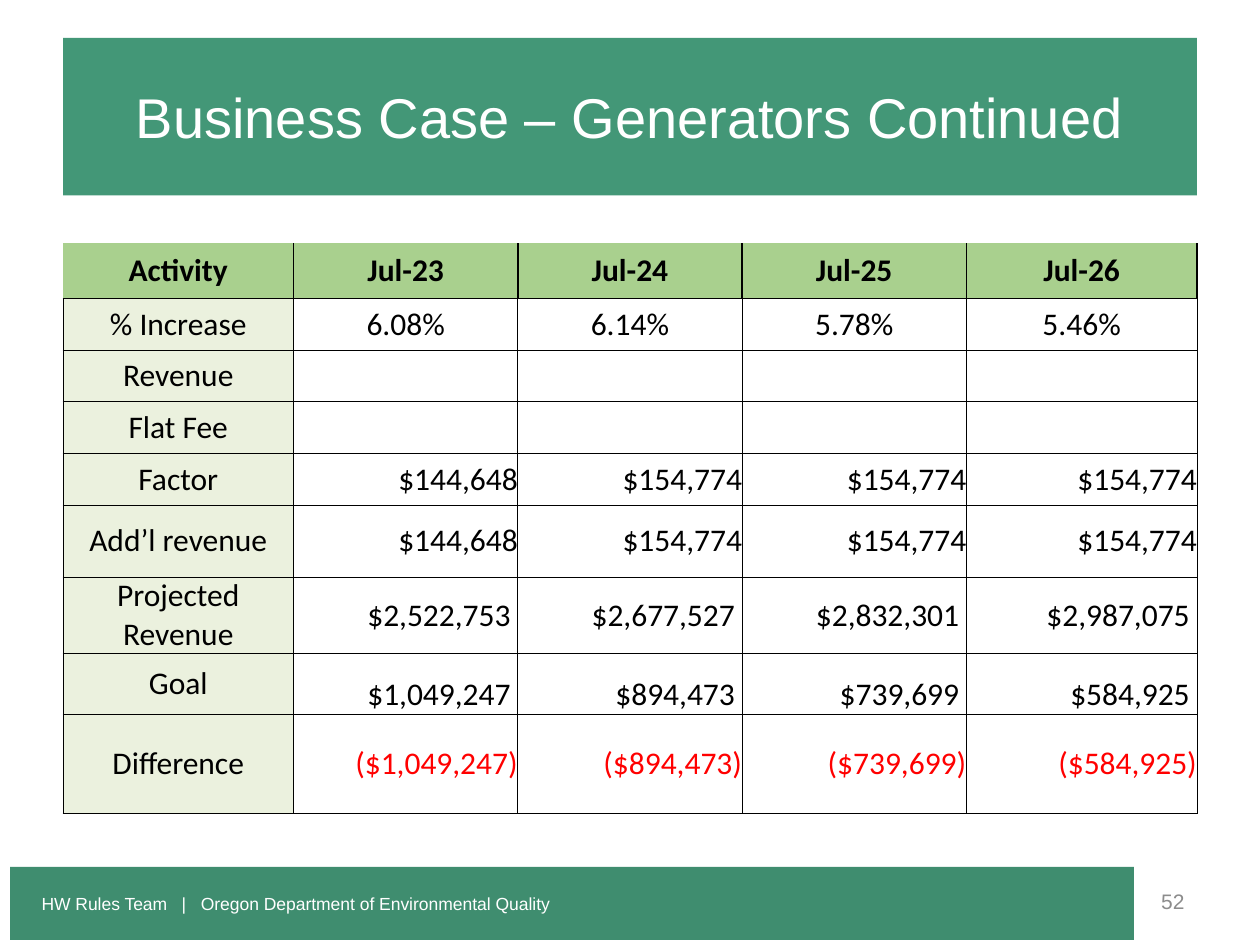
from typing import NamedTuple

from lxml.etree import SubElement
from pptx import Presentation
from pptx.dml.color import RGBColor
from pptx.enum.shapes import MSO_SHAPE
from pptx.enum.text import MSO_ANCHOR, MSO_AUTO_SIZE, PP_ALIGN
from pptx.oxml.ns import qn
from pptx.util import Inches, Pt

COLORS = {
    "title": "439777", "footer": "3F8D6F", "header": "A9D08E", "label": "EBF1DE",
    "white": "FFFFFF", "black": "000000", "gray": "8C8C8C", "red": "FF0000",
}


class Row(NamedTuple):
    height: float
    label: str
    values: tuple = ("",) * 4
    align: PP_ALIGN = PP_ALIGN.RIGHT
    anchor: MSO_ANCHOR = MSO_ANCHOR.MIDDLE
    color: str = "black"


COL_WIDTHS = (1.83, 1.78, 1.78, 1.78, 1.83)
ROWS = [
    Row(0.44, "Activity", ("Jul-23", "Jul-24", "Jul-25", "Jul-26"), PP_ALIGN.CENTER),
    Row(0.41, "% Increase", ("6.08%", "6.14%", "5.78%", "5.46%"), PP_ALIGN.CENTER),
    Row(0.41, "Revenue"),
    Row(0.41, "Flat Fee"),
    Row(0.41, "Factor", ("$144,648", "$154,774", "$154,774", "$154,774")),
    Row(0.57, "Add’l revenue", ("$144,648", "$154,774", "$154,774", "$154,774")),
    Row(0.61, "Projected Revenue",
        ("$2,522,753 ", "$2,677,527 ", "$2,832,301 ", "$2,987,075 ")),
    Row(0.48, "Goal", ("$1,049,247 ", "$894,473 ", "$739,699 ", "$584,925 "),
        anchor=MSO_ANCHOR.BOTTOM),
    Row(0.79, "Difference", ("($1,049,247)", "($894,473)", "($739,699)", "($584,925)"),
        color="red"),
]


def rgb(name: str) -> RGBColor:
    return RGBColor.from_string(COLORS[name])


def place(sp, left: float, top: float, width: float, height: float) -> None:
    sp.left, sp.top = Inches(left), Inches(top)
    sp.width, sp.height = Inches(width), Inches(height)


def add_text(tf, text: str, size: float, color: str, align: PP_ALIGN,
             font: str = "Arial", bold: bool = False) -> None:
    p = tf.paragraphs[0]
    p.alignment = align
    r = p.add_run()
    r.text = text
    r.font.name, r.font.size, r.font.bold = font, Pt(size), bold
    r.font.color.rgb = rgb(color)


def set_borders(cell, widths: dict) -> None:
    """Draw black cell edges; a width of 0 leaves the edge off."""
    tc_pr = cell._tc.get_or_add_tcPr()
    for side in "LRTB":
        width = widths.get(side, 0)
        ln = SubElement(tc_pr, qn(f"a:ln{side}"), w=str(Pt(width)))
        if width:
            fill = SubElement(ln, qn("a:solidFill"))
            SubElement(fill, qn("a:srgbClr"), val=COLORS["black"])
        else:
            SubElement(ln, qn("a:noFill"))


def fill_cell(cell, text: str, row: Row, is_header: bool, is_label: bool) -> None:
    cell.margin_left = cell.margin_right = cell.margin_top = cell.margin_bottom = 0
    cell.vertical_anchor = MSO_ANCHOR.MIDDLE if is_label else row.anchor
    if is_header:
        set_borders(cell, {"L": 0 if is_label else 1, "R": 1, "B": 0.5})
    else:
        set_borders(cell, dict.fromkeys("LRTB", 0.5))
    if is_header or is_label:
        cell.fill.solid()
        cell.fill.fore_color.rgb = rgb("header" if is_header else "label")
    else:
        cell.fill.background()
    if text:
        add_text(cell.text_frame, text, 18, "black" if is_label else row.color,
                 PP_ALIGN.CENTER if is_label else row.align, "Calibri", is_header)


def add_fee_table(s) -> None:
    frame = s.shapes.add_table(len(ROWS), len(COL_WIDTHS), Inches(0.5), Inches(1.93),
                               Inches(sum(COL_WIDTHS)),
                               Inches(sum(row.height for row in ROWS)))
    table = frame.table
    table.horz_banding = False
    for col, width in zip(table.columns, COL_WIDTHS):
        col.width = Inches(width)
    for i, row in enumerate(ROWS):
        table.rows[i].height = Inches(row.height)
        for j, text in enumerate((row.label, *row.values)):
            fill_cell(table.cell(i, j), text, row, i == 0, j == 0)


def main() -> None:
    prs = Presentation()
    prs.slide_width, prs.slide_height = Inches(10), Inches(7.5)
    s = prs.slides.add_slide(prs.slide_layouts[5])

    # Title band
    title = s.shapes.title
    place(title, 0.5, 0.3, 9, 1.25)
    title.fill.solid()
    title.fill.fore_color.rgb = rgb("title")
    tf = title.text_frame
    tf.auto_size = MSO_AUTO_SIZE.NONE
    tf.vertical_anchor = MSO_ANCHOR.MIDDLE
    add_text(tf, "Business Case – Generators Continued", 32, "white", PP_ALIGN.CENTER)

    # Footer band
    footer = s.shapes.add_shape(MSO_SHAPE.RECTANGLE, Inches(0.08), Inches(6.88),
                                Inches(8.92), Inches(0.58))
    footer.shadow.inherit = False
    footer.fill.solid()
    footer.fill.fore_color.rgb = rgb("footer")
    footer.line.fill.background()
    tf = footer.text_frame
    tf.margin_left = Inches(0.25)
    tf.vertical_anchor = MSO_ANCHOR.MIDDLE
    add_text(tf, "HW Rules Team   |   Oregon Department of Environmental Quality",
             10, "white", PP_ALIGN.LEFT)

    # Page number
    number = s.shapes.add_textbox(Inches(7.17), Inches(6.95), Inches(2.33), Inches(0.4))
    tf = number.text_frame
    tf.word_wrap = True
    tf.vertical_anchor = MSO_ANCHOR.MIDDLE
    add_text(tf, "52", 12, "gray", PP_ALIGN.RIGHT)

    # Fee table
    add_fee_table(s)

    prs.save("out.pptx")


if __name__ == "__main__":
    main()
